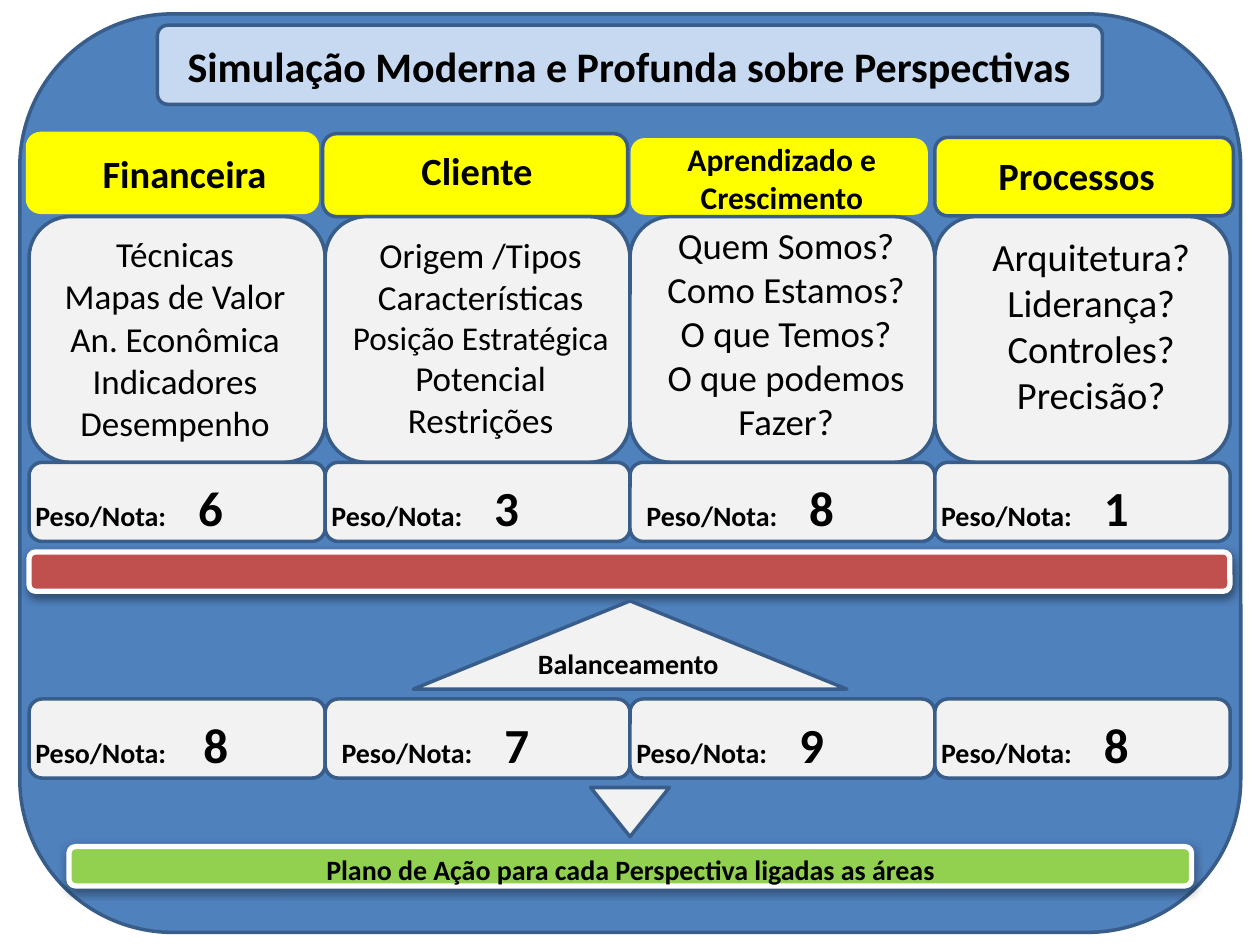
from dataclasses import dataclass

from lxml import etree
from pptx import Presentation
from pptx.dml.color import RGBColor
from pptx.enum.shapes import MSO_SHAPE
from pptx.enum.text import MSO_ANCHOR, MSO_AUTO_SIZE, PP_ALIGN
from pptx.oxml.ns import qn
from pptx.util import Pt

ROUNDED = MSO_SHAPE.ROUNDED_RECTANGLE
TRIANGLE = MSO_SHAPE.ISOSCELES_TRIANGLE
LEFT, CENTER = PP_ALIGN.LEFT, PP_ALIGN.CENTER
TOP, MIDDLE = MSO_ANCHOR.TOP, MSO_ANCHOR.MIDDLE
NO_AUTOFIT = MSO_AUTO_SIZE.NONE


@dataclass(frozen=True)
class Theme:
    font: str = "Calibri"
    text: str = "000000"
    panel: str = "4F81BD"
    outline: str = "385D8A"
    banner: str = "C6D9F1"
    heading: str = "FFFF00"
    card: str = "F2F2F2"
    beam: str = "C0504D"
    plan: str = "92D050"
    white: str = "FFFFFF"
    title_size: float = 24
    label_size: float = 16
    score_size: float = 28
    line_width: float = 2
    bar_line_width: float = 3
    inset: float = 3.6


@dataclass(frozen=True)
class Box:
    left: float
    top: float
    width: float
    height: float

    def lengths(self) -> tuple:
        return Pt(self.left), Pt(self.top), Pt(self.width), Pt(self.height)


@dataclass(frozen=True)
class Score:
    value: str
    indent: float = 0
    tab: float = 93


@dataclass(frozen=True)
class Perspective:
    name: str
    name_size: float
    heading: Box
    heading_outline: str
    name_box: Box
    topics: tuple
    topic_sizes: tuple
    topics_box: Box
    before: Score
    after: Score


THEME = Theme()
COLUMN_EDGES = (16.6, 185.8, 360, 534.2, 703)
BODY_TOP, BODY_HEIGHT = 123.8, 140.4
SCORE_HEIGHT = 45.2
BEFORE_TOP, AFTER_TOP = 264.2, 399.4

PERSPECTIVES = (
    Perspective(
        "Financeira", 22, Box(15.8, 76.3, 165.6, 45), THEME.heading, Box(23.8, 82, 163.4, 33),
        ("Técnicas", "Mapas de Valor", "An. Econômica", "Indicadores", "Desempenho"),
        (20,) * 5, Box(22.3, 129.6, 155.5, 122.4), Score("6"), Score("8", tab=96)),
    Perspective(
        "Cliente", 22, Box(184.4, 76.4, 174.2, 47.4), THEME.outline, Box(193.7, 80.6, 157.7, 33),
        ("Origem /Tipos", "Características", "Posição Estratégica", "Potencial", "Restrições"),
        (20, 20, 19, 20, 20), Box(191.5, 129.6, 166.3, 143.3), Score("3"), Score("7", indent=5.8)),
    Perspective(
        "Aprendizado e Crescimento", 18, Box(361.4, 79.9, 167.8, 41.8), THEME.heading,
        Box(370.1, 76.3, 153.4, 49),
        ("Quem Somos?", "Como Estamos?", "O que Temos?", "O que podemos", "Fazer?"),
        (21,) * 5, Box(371.5, 123.8, 155.5, 132.5), Score("8", indent=5.8), Score("9")),
    Perspective(
        "Processos", 22, Box(534.2, 78.5, 170.6, 44.9), THEME.outline, Box(536.4, 83.5, 157.7, 33),
        ("Arquitetura?", "Liderança?", "Controles?", "Precisão?"),
        (22,) * 4, Box(545.8, 129.6, 155.5, 110.9), Score("1"), Score("8")),
)


def add_block(slide, box: Box, fill: str, line: str = THEME.outline,
              width: float = THEME.line_width, kind=ROUNDED):
    shape = slide.shapes.add_shape(kind, *box.lengths())
    shape.shadow.inherit = False
    shape.fill.solid()
    shape.fill.fore_color.rgb = RGBColor.from_string(fill)
    shape.line.color.rgb = RGBColor.from_string(line)
    shape.line.width = Pt(width)
    return shape


def add_bar(slide, box: Box, fill: str) -> None:
    shape = add_block(slide, box, fill, THEME.white, THEME.bar_line_width)
    effects = shape.element.spPr.find(qn("a:effectLst"))
    shadow = etree.SubElement(effects, qn("a:outerShdw"), blurRad=str(Pt(5)),
                              dist=str(Pt(1.6)), dir="5400000", rotWithShape="0")
    color = etree.SubElement(shadow, qn("a:srgbClr"), val=THEME.text)
    etree.SubElement(color, qn("a:alpha"), val="38000")


def format_frame(frame, anchor=TOP) -> None:
    frame.word_wrap = True
    frame.auto_size = NO_AUTOFIT
    frame.vertical_anchor = anchor
    frame.margin_left = frame.margin_right = Pt(THEME.inset)
    frame.margin_top = frame.margin_bottom = Pt(THEME.inset)


def format_paragraph(paragraph, size: float, bold: bool, alignment=CENTER) -> None:
    paragraph.alignment = alignment
    paragraph.font.name = THEME.font
    paragraph.font.size = Pt(size)
    paragraph.font.bold = bold
    paragraph.font.color.rgb = RGBColor.from_string(THEME.text)


def add_text(slide, box: Box, lines: tuple, sizes: tuple, bold: bool = True,
             alignment=CENTER):
    frame = slide.shapes.add_textbox(*box.lengths()).text_frame
    format_frame(frame)
    frame.text = "\n".join(lines)
    for paragraph, size in zip(frame.paragraphs, sizes):
        format_paragraph(paragraph, size, bold, alignment)
    return frame


def add_title(slide) -> None:
    add_block(slide, Box(90, 14.4, 540, 45.2), THEME.banner).adjustments[0] = 0.13
    title = slide.shapes.title
    title.left, title.top, title.width, title.height = Box(91.4, 5.8, 536.4, 63.4).lengths()
    format_frame(title.text_frame, MIDDLE)
    title.text_frame.text = "Simulação Moderna e Profunda sobre Perspectivas"
    format_paragraph(title.text_frame.paragraphs[0], THEME.title_size, True)
    slide.shapes.element.append(title.element)


def add_score(slide, left: float, top: float, width: float, score: Score) -> None:
    add_block(slide, Box(left, top, width, SCORE_HEIGHT), THEME.card)
    box = Box(left + score.indent, top + 5.4, 163.4, 38.9)
    frame = add_text(slide, box, ("Peso/Nota:\t",), (THEME.label_size,), alignment=LEFT)
    paragraph = frame.paragraphs[0]
    value = paragraph.add_run()
    value.text = score.value
    value.font.size = Pt(THEME.score_size)
    properties = paragraph._p.get_or_add_pPr()
    tabs = etree.Element(qn("a:tabLst"))
    etree.SubElement(tabs, qn("a:tab"), pos=str(Pt(score.tab)), algn="l")
    properties.find(qn("a:defRPr")).addprevious(tabs)


def add_perspective(slide, item: Perspective, left: float, right: float) -> None:
    width = right - left
    add_block(slide, item.heading, THEME.heading, item.heading_outline)
    add_text(slide, item.name_box, (item.name,), (item.name_size,))
    add_block(slide, Box(left, BODY_TOP, width, BODY_HEIGHT), THEME.card)
    add_text(slide, item.topics_box, item.topics, item.topic_sizes, bold=False)
    add_score(slide, left, BEFORE_TOP, width, item.before)
    add_score(slide, left, AFTER_TOP, width, item.after)


def add_balance(slide) -> None:
    add_bar(slide, Box(16.6, 315.4, 686.2, 22.5), THEME.beam)
    add_block(slide, Box(236.2, 343.4, 247.7, 50.4), THEME.card, kind=TRIANGLE)
    add_text(slide, Box(303.8, 365.8, 118, 45.4), ("Balanceamento",),
             (THEME.label_size,), alignment=LEFT)


def add_plan(slide) -> None:
    add_block(slide, Box(337.5, 450, 45, 28.1), THEME.card, kind=TRIANGLE).rotation = 180
    add_bar(slide, Box(39.4, 483.8, 641.5, 22.5), THEME.plan)
    add_text(slide, Box(129.6, 483.8, 461.5, 26),
             ("Plano de Ação para cada Perspectiva ligadas as áreas",), (THEME.label_size,))


def main() -> None:
    presentation = Presentation()
    presentation.slide_width, presentation.slide_height = Pt(720), Pt(540)
    slide = presentation.slides.add_slide(presentation.slide_layouts[5])
    add_block(slide, Box(11.3, 7.9, 697.7, 524.9), THEME.panel)
    add_title(slide)
    for item, left, right in zip(PERSPECTIVES, COLUMN_EDGES, COLUMN_EDGES[1:]):
        add_perspective(slide, item, left, right)
    add_balance(slide)
    add_plan(slide)
    presentation.save("out.pptx")


if __name__ == "__main__":
    main()
